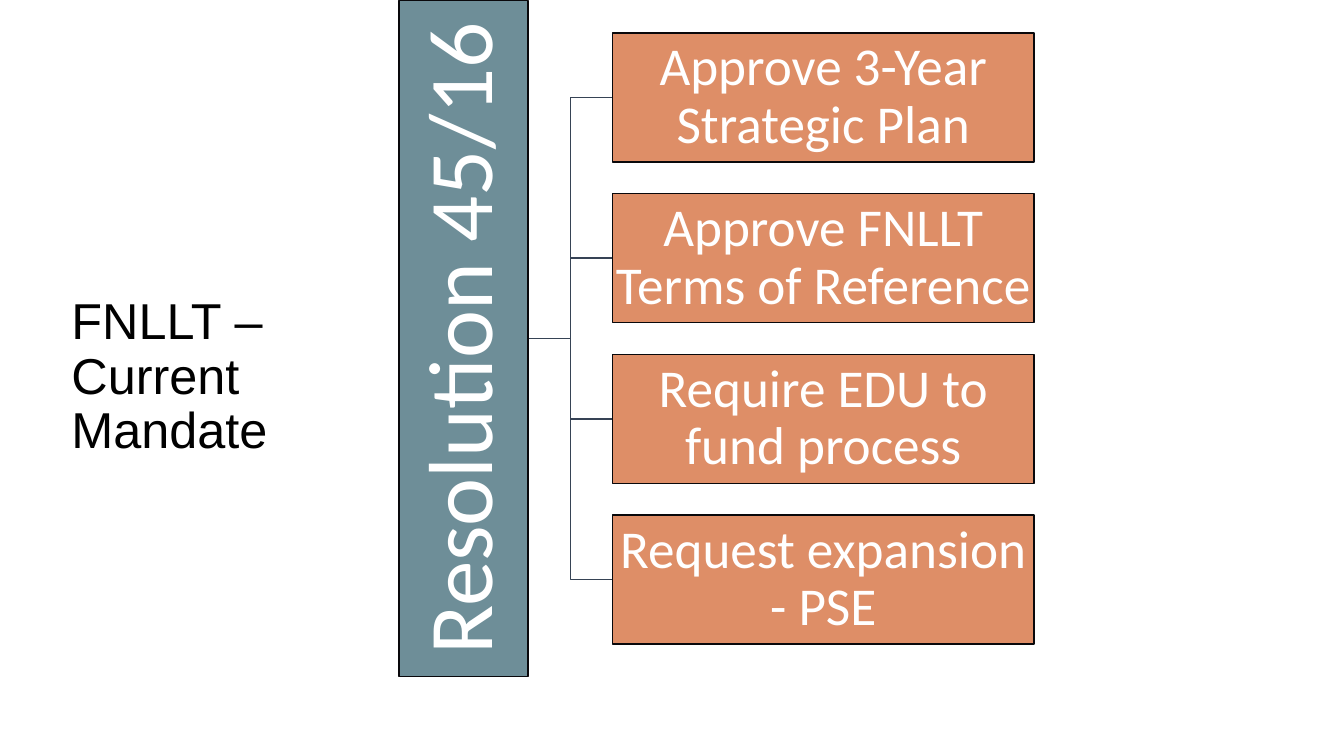
from pptx import Presentation
from pptx.dml.color import RGBColor
from pptx.enum.shapes import MSO_SHAPE
from pptx.enum.text import MSO_ANCHOR, PP_ALIGN
from pptx.util import Cm, Pt

COLOURS = {
    "title": "000000",
    "label": "FFFFFF",
    "bar": "6E8E98",
    "box": "DE8E67",
    "outline": "09080B",
    "branch": "364355",
}
MANDATES = [
    "Approve 3-Year Strategic Plan",
    "Approve FNLLT Terms of Reference",
    "Require EDU to fund process",
    "Request expansion - PSE",
]


def write(shape, text, font_name, size, colour, inset_x, inset_y):
    frame = shape.text_frame
    frame.word_wrap = True
    frame.vertical_anchor = MSO_ANCHOR.MIDDLE
    frame.margin_left = frame.margin_right = Cm(inset_x)
    frame.margin_top = frame.margin_bottom = Cm(inset_y)
    para = frame.paragraphs[0]
    para.text = text
    para.line_spacing = 0.9
    para.font.name = font_name
    para.font.size = Pt(size)
    para.font.color.rgb = RGBColor.from_string(COLOURS[colour])
    return para


def add_block(left, top, width, height, fill, text, size, inset):
    block = page.shapes.add_shape(
        MSO_SHAPE.RECTANGLE, Cm(left), Cm(top), Cm(width), Cm(height))
    block.shadow.inherit = False
    block.fill.solid()
    block.fill.fore_color.rgb = RGBColor.from_string(COLOURS[fill])
    block.line.color.rgb = RGBColor.from_string(COLOURS["outline"])
    block.line.width = Pt(1)
    para = write(block, text, "Calibri", size, "label", inset, inset)
    para.alignment = PP_ALIGN.CENTER
    return block


deck = Presentation()
deck.slide_width = Cm(33.87)
deck.slide_height = Cm(19.05)
page = deck.slides.add_slide(deck.slide_layouts[6])

title = page.shapes.add_textbox(Cm(1.55), Cm(4.67), Cm(7.87), Cm(9.7))
write(title, "FNLLT – Current Mandate", "Arial", 36, "title", 0.25, 0.13)

thickness = 3.25
bar_length = 17.04
bar_x, bar_y = 11.68, 8.53
bar_right = bar_x + thickness / 2
box_left, box_top, box_width, box_pitch = 15.44, 0.83, 10.62, 4.05
elbow_x = (bar_right + box_left) / 2
box_tops = [box_top + index * box_pitch for index in range(len(MANDATES))]

for top in reversed(box_tops):
    box_y = top + thickness / 2
    builder = page.shapes.build_freeform(Cm(bar_right), Cm(bar_y))
    builder.add_line_segments(
        [(Cm(elbow_x), Cm(bar_y)), (Cm(elbow_x), Cm(box_y)),
         (Cm(box_left), Cm(box_y))], close=False)
    branch = builder.convert_to_shape()
    branch.shadow.inherit = False
    branch.fill.background()
    branch.line.color.rgb = RGBColor.from_string(COLOURS["branch"])
    branch.line.width = Pt(1)

bar = add_block(bar_x - bar_length / 2, bar_y - thickness / 2, bar_length,
                thickness, "bar", "Resolution 45/16", 65, 0.12)
bar.rotation = 270

for top, mandate in zip(box_tops, MANDATES):
    add_block(box_left, top, box_width, thickness, "box", mandate, 38, 0.07)

deck.save("out.pptx")
